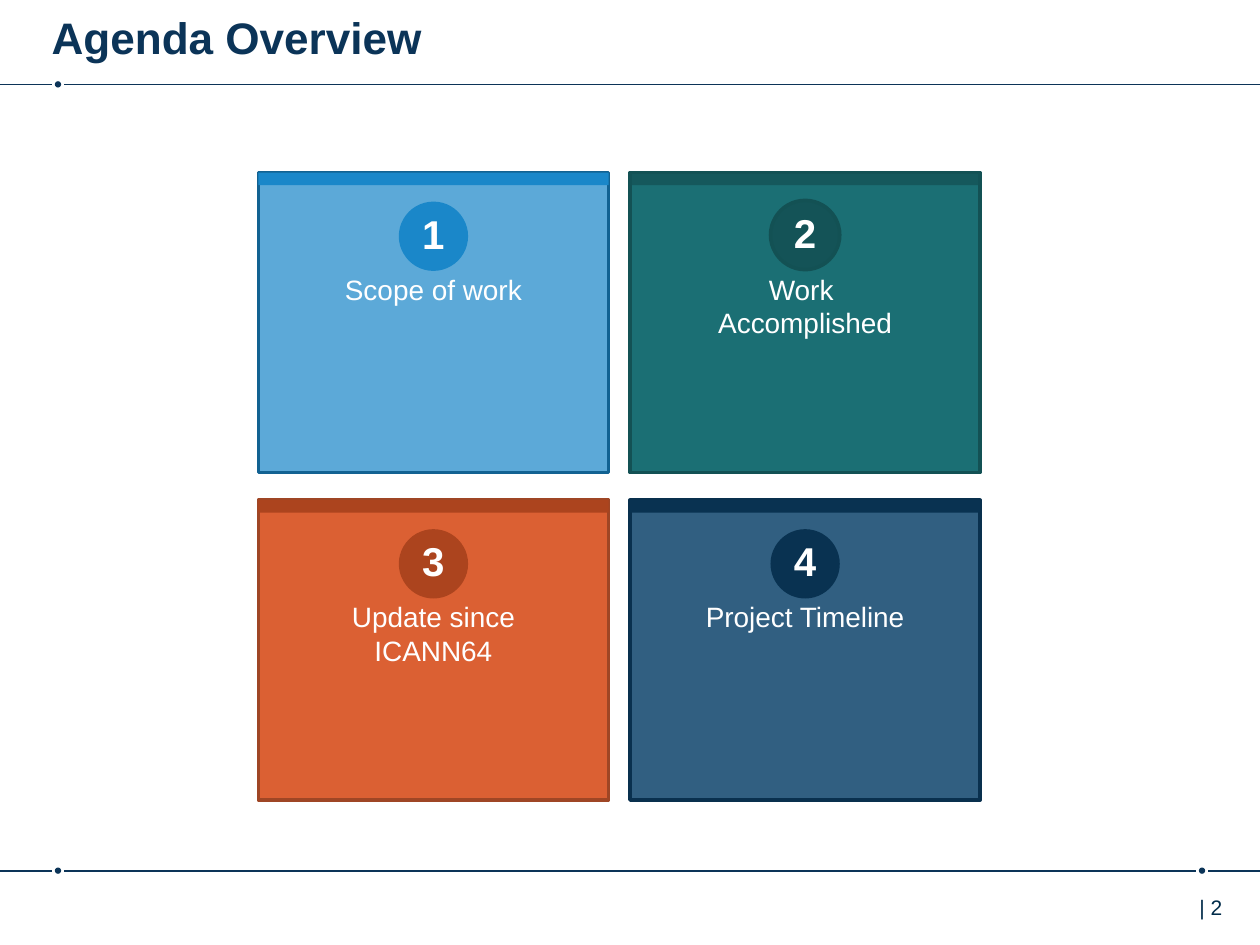
"""Build an agenda slide with four numbered cards between two dotted rules."""
from dataclasses import dataclass

import pptx
import pptx.dml.color
import pptx.enum.shapes
import pptx.enum.text
import pptx.oxml
import pptx.oxml.ns
import pptx.util

COLOURS = {
    "navy": "0C3458", "title": "0B3458", "page": "002B49", "white": "FFFFFF",
    "blue": "1A87C9", "blue edge": "126292",
    "teal": "1B6F74", "teal edge": "135154", "teal dark": "145357",
    "orange": "DB6033", "orange edge": "9F4625", "orange dark": "AC441E",
    "slate": "0D436C", "slate edge": "09304E", "slate dark": "093251",
}
WIDTH, HEIGHT = 10, 7.5
GRID_LEFT, GRID_TOP = 2.05, 1.37
COLUMN_STEP, ROW_STEP = 2.95, 2.6
CARD_WIDTH, CARD_HEIGHT, BAR_HEIGHT = 2.78, 2.38, 0.1
BADGE, LABEL_WIDTH, LABEL_HEIGHT = 0.55, 2.27, 1.18
DOT, DOT_GAP = 0.05, 0.05
LEFT_DOT, RIGHT_DOT = 0.46, 9.54

Shape = pptx.enum.shapes.MSO_SHAPE
Align = pptx.enum.text.PP_ALIGN
inches = pptx.util.Inches


@dataclass
class Card:
    column: int
    row: int
    label: str
    fill: str
    edge: str
    accent: str
    opacity: int = 100
    bar_opacity: int = 100
    badge_edge: str = ""
    lift: float = 0


@dataclass
class Rule:
    height: float
    dots: tuple


CARDS = [
    Card(0, 0, "Scope of work", "blue", "blue edge", "blue", opacity=71),
    Card(1, 0, "Work \vAccomplished", "teal", "teal edge", "teal dark",
         bar_opacity=80, badge_edge="teal edge", lift=0.01),
    Card(0, 1, "Update since ICANN64", "orange", "orange edge", "orange dark"),
    Card(1, 1, "Project Timeline", "slate", "slate edge", "slate dark", opacity=85),
]
RULES = [Rule(0.67, (LEFT_DOT,)), Rule(6.91, (LEFT_DOT, RIGHT_DOT))]


def colour(name: str) -> pptx.dml.color.RGBColor:
    return pptx.dml.color.RGBColor.from_string(COLOURS[name])


def add_filled(page, kind, left: float, top: float, width: float, height: float,
               fill: str, edge: str = "", opacity: int = 100) -> None:
    shape = page.shapes.add_shape(kind, *map(inches, (left, top, width, height)))
    shape.shadow.inherit = False
    shape.fill.solid()
    shape.fill.fore_color.rgb = colour(fill)
    if opacity < 100:
        tint = shape.fill._xPr.find(".//" + pptx.oxml.ns.qn("a:srgbClr"))
        alpha = pptx.oxml.parse_xml(
            f'<a:alpha {pptx.oxml.ns.nsdecls("a")} val="{opacity * 1000}"/>')
        tint.append(alpha)
    if edge:
        shape.line.color.rgb = colour(edge)
        shape.line.width = pptx.util.Pt(2)
    else:
        shape.line.fill.background()


def style_text(frame, text: str, size: float, ink: str, align, bold: bool = False) -> None:
    frame.word_wrap = True
    para = frame.paragraphs[0]
    para.text = text
    para.alignment = align
    para.font.name = "Arial"
    para.font.size = pptx.util.Pt(size)
    para.font.bold = bold
    para.font.color.rgb = colour(ink)


def add_label(page, left: float, top: float, width: float, height: float, text: str,
              size: float, ink: str = "white", align=Align.CENTER, bold: bool = False):
    box = page.shapes.add_textbox(*map(inches, (left, top, width, height)))
    style_text(box.text_frame, text, size, ink, align, bold)
    return box


def add_rule(page, rule: Rule) -> None:
    stops = [0]
    for dot in rule.dots:
        add_filled(page, Shape.OVAL, dot - DOT / 2, rule.height - DOT / 2, DOT, DOT, "navy")
        stops += [dot - DOT_GAP, dot + DOT_GAP]
    stops.append(WIDTH)
    for start, end in zip(stops[::2], stops[1::2]):
        line = page.shapes.add_connector(
            pptx.enum.shapes.MSO_CONNECTOR.STRAIGHT,
            *map(inches, (start, rule.height, end, rule.height)))
        line.line.color.rgb = colour("navy")
        line.line.width = pptx.util.Pt(1)
        line._element.spPr.append(pptx.oxml.parse_xml(
            f'<a:effectLst {pptx.oxml.ns.nsdecls("a")}/>'))


def add_card(page, number: int, card: Card) -> None:
    left = GRID_LEFT + card.column * COLUMN_STEP
    top = GRID_TOP + card.row * ROW_STEP
    add_filled(page, Shape.RECTANGLE, left, top, CARD_WIDTH, CARD_HEIGHT,
               card.fill, card.edge, card.opacity)
    add_filled(page, Shape.RECTANGLE, left, top, CARD_WIDTH, BAR_HEIGHT,
               card.accent, opacity=card.bar_opacity)
    add_filled(page, Shape.OVAL, left + (CARD_WIDTH - BADGE) / 2, top + 0.23 - card.lift,
               BADGE, BADGE, card.accent, card.badge_edge)
    add_label(page, left + (CARD_WIDTH - LABEL_WIDTH) / 2, top + 0.74,
              LABEL_WIDTH, LABEL_HEIGHT, card.label, 16)
    add_label(page, left, top + 0.24 - card.lift, CARD_WIDTH, 0.49,
              str(number), 23, bold=True)


def add_title(page, text: str) -> None:
    title = page.shapes.title
    title.left, title.top, title.width, title.height = map(inches, (0.41, 0.05, 8.76, 0.49))
    frame = title.text_frame
    frame.margin_left = frame.margin_right = 0
    frame.margin_top = frame.margin_bottom = inches(0.05)
    frame.vertical_anchor = pptx.enum.text.MSO_ANCHOR.MIDDLE
    style_text(frame, text, 25.2, "title", Align.LEFT, bold=True)


def main() -> None:
    deck = pptx.Presentation()
    deck.slide_width, deck.slide_height = inches(WIDTH), inches(HEIGHT)
    page = deck.slides.add_slide(deck.slide_layouts.get_by_name("Title Only"))
    add_title(page, "Agenda Overview")
    for rule in RULES:
        add_rule(page, rule)
    page_number = add_label(page, 9.29, 7.05, 0.87, 0.4, "| 2", 12, "page", Align.LEFT)
    page_number.text_frame.margin_left = inches(0.23)
    for number, card in enumerate(CARDS, start=1):
        add_card(page, number, card)
    deck.save("out.pptx")


if __name__ == "__main__":
    main()
